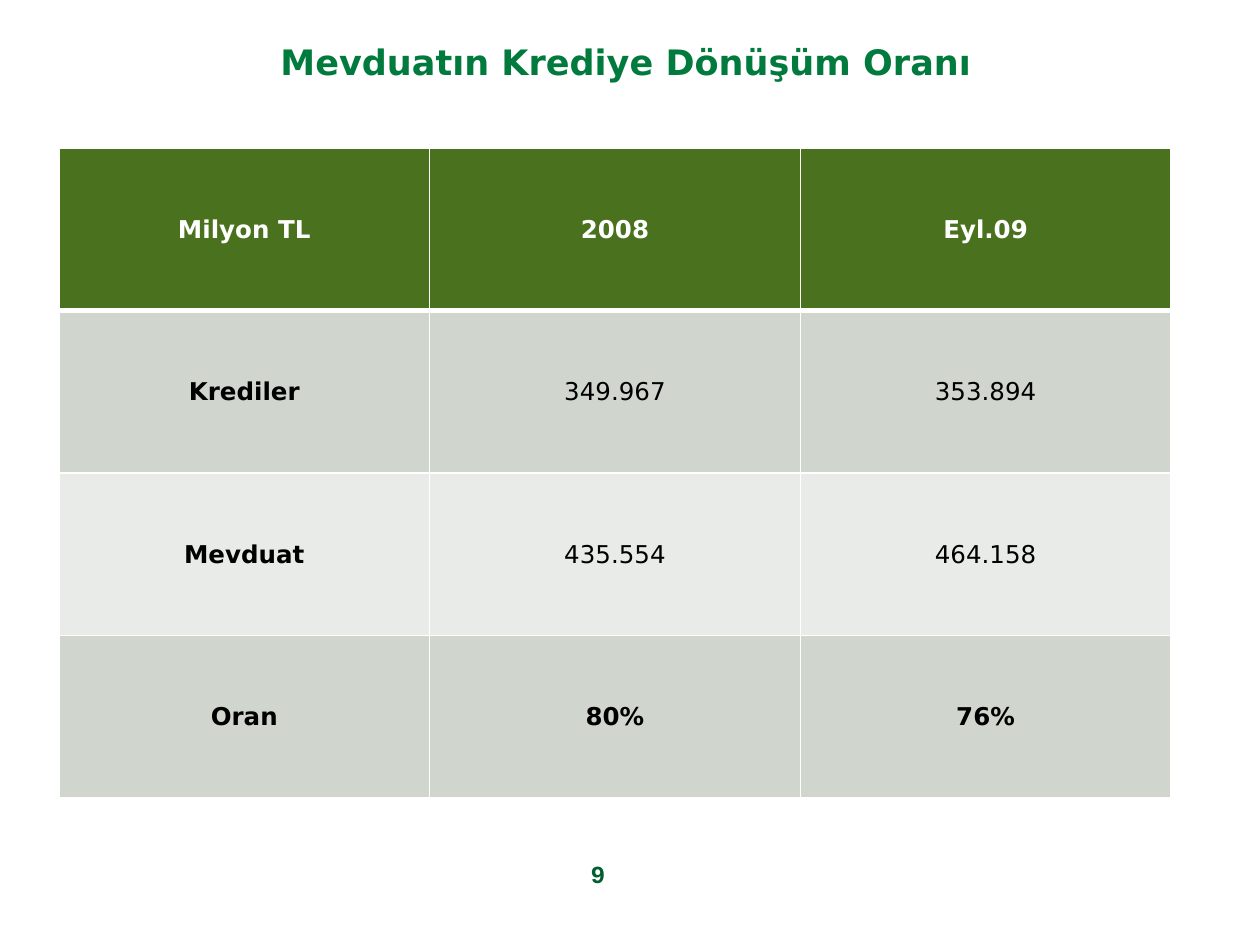
from lxml import etree
from pptx import Presentation
from pptx import util as u
from pptx.dml.color import RGBColor
from pptx.enum import text
from pptx.oxml import ns

PX = u.Inches(1) / 126  # EMU in one px
THEME = {
    "title": {"name": "DejaVu Sans", "size": 20, "color": "007A3D", "bold": True},
    "header": {"name": "DejaVu Sans", "size": 14, "color": "FFFFFF", "bold": True},
    "label": {"name": "DejaVu Sans", "size": 14, "color": "000000", "bold": True},
    "value": {"name": "DejaVu Sans", "size": 14, "color": "000000", "bold": False},
    "number": {"name": "Courier New", "size": 14, "color": "005E31", "bold": True},
    "header_fill": "49711E",
    "band_fills": ["E9EBE8", "D0D5CD"],
    "border": "FFFFFF",
}


def write(frame, content, style):
    """Put one centred, formatted line into a text frame."""
    para = frame.paragraphs[0]
    para.alignment = text.PP_ALIGN.CENTER
    span = para.add_run()
    span.text = content
    look = THEME[style]
    for key, value in {"name": look["name"], "size": u.Pt(look["size"]), "bold": look["bold"]}.items():
        setattr(span.font, key, value)
    span.font.color.rgb = RGBColor.from_string(look["color"])
    return para


def add_border(cell, side, points):
    """Add a solid line on one side; call before the cell is filled."""
    line = etree.SubElement(cell._tc.get_or_add_tcPr(), ns.qn(f"a:ln{side}"), w=str(u.Pt(points)))
    fill = etree.SubElement(line, ns.qn("a:solidFill"))
    etree.SubElement(fill, ns.qn("a:srgbClr"), val=THEME["border"])


deck = Presentation()
deck.slide_width, deck.slide_height = u.Inches(10), u.Inches(7.5)
page = deck.slides.add_slide(deck.slide_layouts[5])

# Title
title = page.shapes.title
title.left, title.top, title.width, title.height = [round(v * PX) for v in (59, 20, 1134, 84)]
title.text_frame.vertical_anchor = text.MSO_ANCHOR.MIDDLE
write(title.text_frame, "Mevduatın Krediye Dönüşüm Oranı", "title")

# Table of loans, deposits and their ratio
rows = [
    ["Milyon TL", "2008", "Eyl.09"],
    ["Krediler", "349.967", "353.894"],
    ["Mevduat", "435.554", "464.158"],
    ["Oran", "80%", "76%"],
]
area = [round(v * PX) for v in (59, 148, 1112, 650)]
table = page.shapes.add_table(len(rows), len(rows[0]), *area).table
margins = {"margin_left": 1, "margin_top": 1, "margin_right": 1, "margin_bottom": 0}
for r, row in enumerate(rows):
    for c, content in enumerate(row):
        cell = table.cell(r, c)
        for name, px in margins.items():
            setattr(cell, name, round(px * PX))
        cell.vertical_anchor = text.MSO_ANCHOR.MIDDLE
        for side in "LRTB":
            below_header = (r, side) in [(0, "B"), (1, "T")]
            add_border(cell, side, 3 if below_header else 1)
        cell.fill.solid()
        color = THEME["header_fill"] if r == 0 else THEME["band_fills"][r % 2]
        cell.fill.fore_color.rgb = RGBColor.from_string(color)
        bold = c == 0 or r == len(rows) - 1
        write(cell.text_frame, content, "header" if r == 0 else "label" if bold else "value")

# Page number
box = page.shapes.add_textbox(*[round(v * PX) for v in (451, 859, 294, 66)])
box.text_frame.word_wrap = True
para = write(box.text_frame, "9", "number")
para.line_spacing = 0.76

deck.save("out.pptx")
